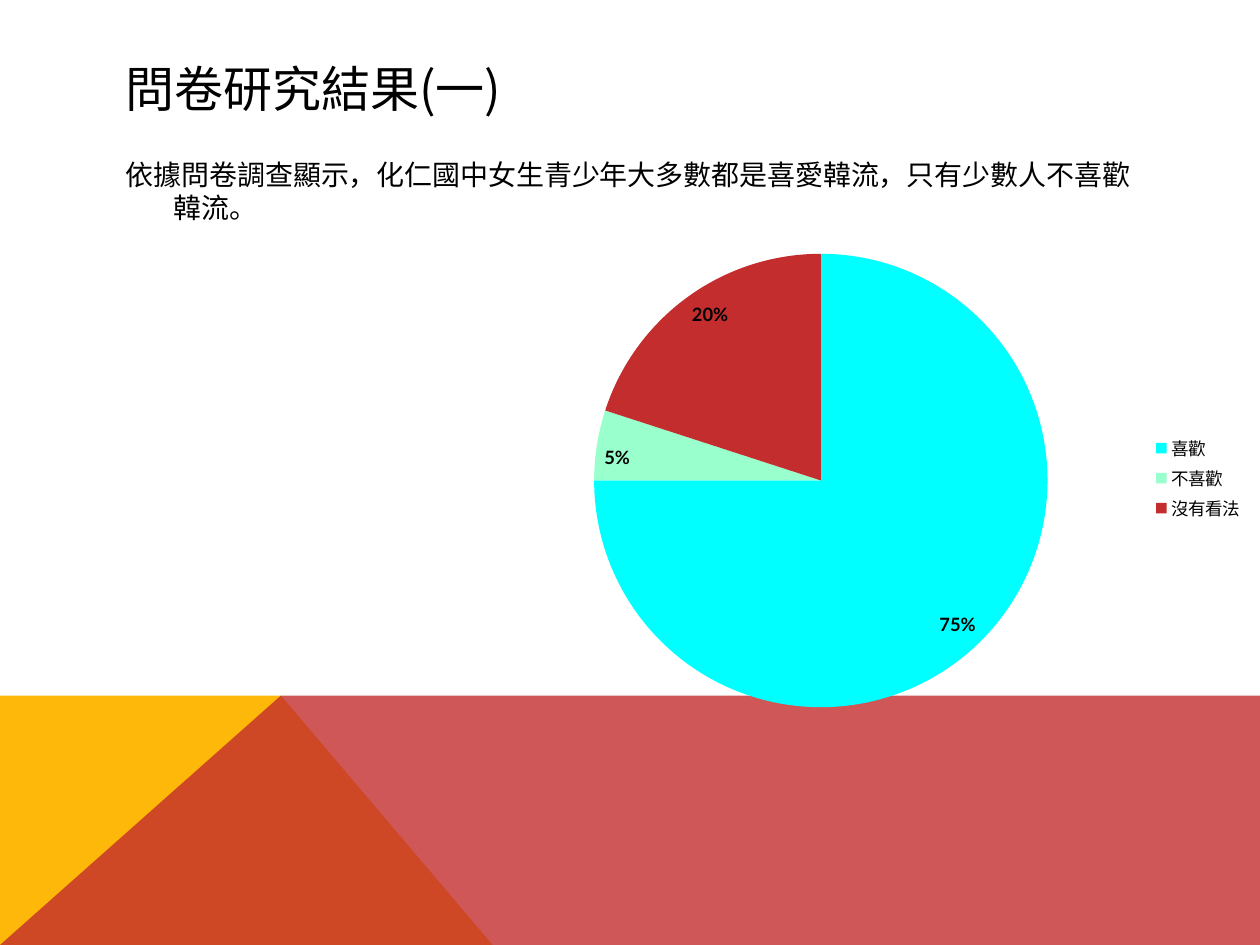
from lxml import etree
from pptx import Presentation
from pptx.chart.data import CategoryChartData
from pptx.dml.color import RGBColor
from pptx.enum.chart import XL_CHART_TYPE, XL_LABEL_POSITION, XL_LEGEND_POSITION
from pptx.enum.text import MSO_ANCHOR
from pptx.oxml import parse_xml
from pptx.oxml.ns import nsdecls, qn
from pptx.util import Inches, Pt

COLORS = {
    "text": "000000",
    "yellow": "FEB80A",
    "red": "C32D2E",
    "cyan": "00FFFF",
    "mint": "99FFCC",
}
TEXT_FONT = "Noto Sans CJK SC"
CHART_FONT = "Lato"
SURVEY = [("喜歡", 75, "cyan"), ("不喜歡", 5, "mint"), ("沒有看法", 20, "red")]


def color(name):
    return RGBColor.from_string(COLORS[name])


def set_format(target, values):
    for name, value in values.items():
        setattr(target, name, value)


def add_polygon(slide, points, fill, opacity=100):
    """Draw a closed outline through points given in inches."""
    builder = slide.shapes.build_freeform(
        *(Inches(value) for value in points[0]), scale=1.0)
    builder.add_line_segments([(Inches(x), Inches(y)) for x, y in points[1:]])
    shape = builder.convert_to_shape()
    shape.shadow.inherit = False
    shape.line.fill.background()
    shape.fill.solid()
    shape.fill.fore_color.rgb = color(fill)
    if opacity < 100:
        fill_color = shape.fill._xPr.find(qn("a:solidFill"))[0]
        etree.SubElement(fill_color, qn("a:alpha"), val=str(opacity * 1000))


def add_footer_band(slide, left, top, width, height):
    bottom, right, peak = top + height, left + width, left + 2.23
    add_polygon(slide, [(left, bottom), (left, top), (peak, top),
                        (left + 3.91, bottom)], "yellow")
    add_polygon(slide, [(left, bottom), (peak, top), (right, top),
                        (right, bottom)], "red", 80)


def add_text(slide, left, top, width, height, text, size, anchor):
    box = slide.shapes.add_textbox(*map(Inches, (left, top, width, height)))
    set_format(box.text_frame, {"word_wrap": True, "vertical_anchor": anchor})
    paragraph = box.text_frame.paragraphs[0]
    run = paragraph.add_run()
    run.text = text
    set_format(run.font, {"size": Pt(size), "name": TEXT_FONT})
    run.font.color.rgb = color("text")
    etree.SubElement(run.font._element, qn("a:ea"), typeface=TEXT_FONT)
    return paragraph


def add_body(slide, left, top, width, height, text):
    paragraph = add_text(slide, left, top, width, height, text, 16, MSO_ANCHOR.TOP)
    paragraph.space_before = Pt(8)
    properties = paragraph._p.get_or_add_pPr()
    properties.set("marL", str(Inches(0.38)))
    properties.set("indent", str(-Inches(0.38)))


def set_plot_layout(chart, left, top, width, height):
    """Fix the pie's area, given as fractions of the chart."""
    plot_area = chart._chartSpace.chart.plotArea
    for layout in plot_area.findall(qn("c:layout")):
        plot_area.remove(layout)
    settings = {"layoutTarget": "inner", "xMode": "edge", "yMode": "edge",
                "x": left, "y": top, "w": width, "h": height}
    items = "".join(f'<c:{name} val="{value}"/>' for name, value in settings.items())
    plot_area.insert(0, parse_xml(
        f'<c:layout {nsdecls("c")}><c:manualLayout>{items}</c:manualLayout></c:layout>'))


def add_survey_pie(slide, left, top, width, height):
    data = CategoryChartData()
    data.categories = [name for name, _, _ in SURVEY]
    data.add_series("Series 1", [value for _, value, _ in SURVEY])
    chart = slide.shapes.add_chart(
        XL_CHART_TYPE.PIE, *map(Inches, (left, top, width, height)), data).chart
    set_format(chart, {"has_title": False, "has_legend": True})
    set_format(chart.font, {"size": Pt(10), "name": CHART_FONT})
    chart.font.color.rgb = color("text")
    set_format(chart.legend, {"position": XL_LEGEND_POSITION.RIGHT,
                              "include_in_layout": False})
    set_plot_layout(chart, 0.17, 0.04, 0.57, 0.93)

    plot = chart.plots[0]
    set_format(plot, {"vary_by_categories": True, "has_data_labels": True})
    set_format(plot.data_labels, {
        "show_percentage": True, "show_value": False,
        "number_format": "0%", "number_format_is_linked": False,
        "position": XL_LABEL_POSITION.INSIDE_END})
    set_format(plot.data_labels.font,
               {"size": Pt(10.5), "bold": True, "name": CHART_FONT})
    plot.data_labels.font.color.rgb = color("text")
    for index, (_, _, fill) in enumerate(SURVEY):
        point_format = plot.series[0].points[index].format
        point_format.fill.solid()
        point_format.fill.fore_color.rgb = color(fill)
        point_format.line.fill.background()


def main():
    presentation = Presentation()
    set_format(presentation, {"slide_width": Inches(10), "slide_height": Inches(7.5)})
    slide = presentation.slides.add_slide(presentation.slide_layouts[6])
    add_footer_band(slide, 0, 5.52, 10, 1.98)
    add_text(slide, 0.9, 0.4, 8.22, 0.6, "問卷研究結果(一)", 28, MSO_ANCHOR.MIDDLE)
    add_body(slide, 0.9, 1.2, 8.22, 3.91,
             "依據問卷調查顯示，化仁國中女生青少年大多數都是喜愛韓流，只有少數人不喜歡韓流。")
    add_survey_pie(slide, 3.63, 1.86, 6.34, 3.87)
    presentation.save("out.pptx")


if __name__ == "__main__":
    main()
